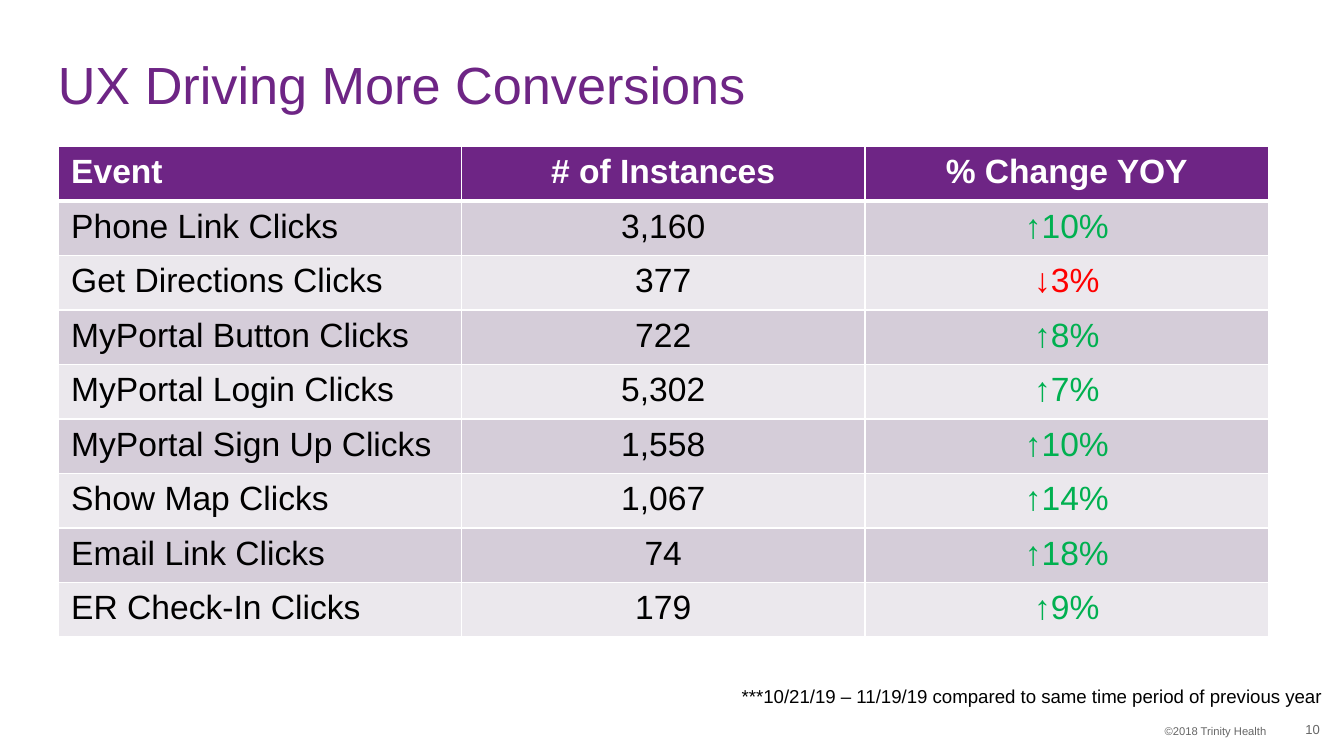
from lxml import etree
from pptx import Presentation
from pptx import util as u
from pptx.dml.color import RGBColor
from pptx.enum import text
from pptx.oxml.ns import qn

PURPLE = RGBColor(0x6E, 0x25, 0x85)
BAND_DARK = RGBColor(0xD5, 0xCD, 0xD9)
BAND_LIGHT = RGBColor(0xEB, 0xE8, 0xED)
GREEN = RGBColor(0x00, 0xB0, 0x50)
RED = RGBColor(0xFF, 0x00, 0x00)
GRAY = RGBColor(0x66, 0x66, 0x66)
BLACK = RGBColor(0, 0, 0)
WHITE = RGBColor(0xFF, 0xFF, 0xFF)
LEFT, CENTER, RIGHT = text.PP_ALIGN.LEFT, text.PP_ALIGN.CENTER, text.PP_ALIGN.RIGHT

TITLE = "UX Driving More Conversions"
HEADER = ("Event", "# of Instances", "% Change YOY")
EVENTS = [
    ("Phone Link Clicks", "3,160", "↑10%"),
    ("Get Directions Clicks", "377", "↓3%"),
    ("MyPortal Button Clicks", "722", "↑8%"),
    ("MyPortal Login Clicks", "5,302", "↑7%"),
    ("MyPortal Sign Up Clicks", "1,558", "↑10%"),
    ("Show Map Clicks", "1,067", "↑14%"),
    ("Email Link Clicks", "74", "↑18%"),
    ("ER Check-In Clicks", "179", "↑9%"),
]
FOOTNOTE = "***10/21/19 – 11/19/19 compared to same time period of previous year"
COPYRIGHT = "©2018 Trinity Health"
PAGE_NUMBER = "10"

SLIDE_WIDTH = u.Inches(10)
SLIDE_HEIGHT = SLIDE_WIDTH * 9 // 16
MARGIN = 0.43
TABLE_TOP, TABLE_WIDTH, TABLE_HEIGHT = 1.09, 9.01, 3.65


def write(frame, words, size, color, align=LEFT, bold=False, spacing=None, after=None):
    paragraph = frame.paragraphs[0]
    paragraph.alignment = align
    paragraph.line_spacing = spacing
    paragraph.space_after = after
    run = paragraph.add_run()
    run.text = words
    run.font.name = "Arial"
    run.font.size = u.Pt(size)
    run.font.bold = bold
    run.font.color.rgb = color


def add_label(slide, box, words, size, color, **style):
    frame = slide.shapes.add_textbox(*map(u.Inches, box)).text_frame
    frame.word_wrap = True
    write(frame, words, size, color, **style)
    return frame


def set_borders(cell, bottom):
    """Draw white cell borders, 1 pt wide except for the bottom one."""
    properties = cell._tc.get_or_add_tcPr()
    widths = {"a:lnL": 1, "a:lnR": 1, "a:lnT": 1, "a:lnB": bottom}
    for position, (side, width) in enumerate(widths.items()):
        line = etree.Element(qn(side), w=str(u.Pt(width)))
        fill = etree.SubElement(line, qn("a:solidFill"))
        etree.SubElement(fill, qn("a:srgbClr"), val=str(WHITE))
        properties.insert(position, line)


def cell_color(row, column, words):
    if row == 0:
        return WHITE
    if column == 2:
        return GREEN if words.startswith("↑") else RED
    return BLACK


def add_event_table(slide):
    rows = [HEADER, *EVENTS]
    table = slide.shapes.add_table(
        len(rows), len(HEADER), u.Inches(MARGIN), u.Inches(TABLE_TOP),
        u.Inches(TABLE_WIDTH), u.Inches(TABLE_HEIGHT)).table
    for r, row in enumerate(rows):
        band = PURPLE if r == 0 else (BAND_LIGHT, BAND_DARK)[r % 2]
        for c, words in enumerate(row):
            cell = table.cell(r, c)
            cell.fill.solid()
            cell.fill.fore_color.rgb = band
            set_borders(cell, bottom=3 if r == 0 else 1)
            write(cell.text_frame, words, 18, cell_color(r, c, words),
                  align=CENTER if c else LEFT, bold=r == 0)


def main():
    deck = Presentation()
    deck.slide_width, deck.slide_height = SLIDE_WIDTH, SLIDE_HEIGHT
    slide = deck.slides.add_slide(deck.slide_layouts[5])

    title = slide.shapes.title
    title.left, title.top, title.width, title.height = map(
        u.Inches, (MARGIN, 0.38, 9, 0.55))
    frame = title.text_frame
    frame.margin_left = frame.margin_top = frame.margin_right = frame.margin_bottom = 0
    frame.vertical_anchor = text.MSO_ANCHOR.MIDDLE
    write(frame, TITLE, 28, PURPLE, spacing=0.9)

    add_label(slide, (5.33, 5.34, 4.19, 0.2), COPYRIGHT, 6, GRAY, align=RIGHT)
    number = add_label(slide, (9.38, 5.28, 0.44, 0.3), PAGE_NUMBER, 7, GRAY, align=RIGHT)
    number.margin_right = 0
    number.vertical_anchor = text.MSO_ANCHOR.MIDDLE
    footnote = add_label(slide, (5.42, 4.92, 5.48, 0.75), FOOTNOTE, 10, BLACK,
                         spacing=u.Pt(21), after=u.Pt(6))
    footnote.auto_size = text.MSO_AUTO_SIZE.SHAPE_TO_FIT_TEXT
    add_event_table(slide)
    deck.save("out.pptx")


if __name__ == "__main__":
    main()
